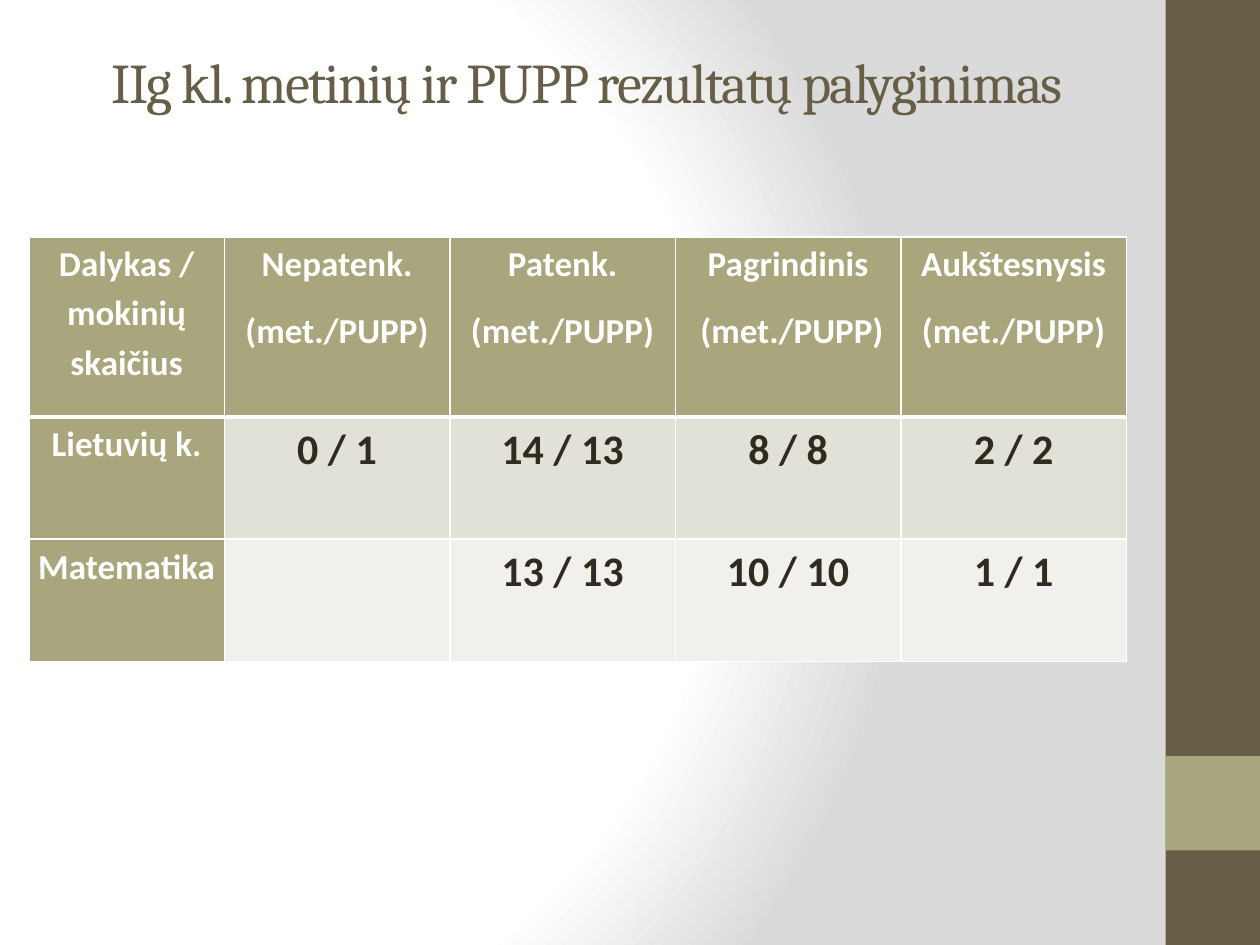
"""Build a slide comparing annual and PUPP results of class IIg."""
from lxml.etree import SubElement
from pptx import Presentation
from pptx.dml.color import RGBColor
from pptx.enum.shapes import MSO_SHAPE
from pptx.enum.text import MSO_ANCHOR, PP_ALIGN
from pptx.oxml import parse_xml
from pptx.oxml.ns import nsdecls, qn
from pptx.util import Inches, Pt

COLORS = {
    "brown": "675E47", "olive": "A9A57C", "ink": "2F2B20", "white": "FFFFFF",
    "gray": "DADADA", "band": "E2E1D7", "light band": "F1F0EC",
}
TITLE = "IIg kl. metinių ir PUPP rezultatų palyginimas"
ROWS = [
    ["Dalykas / mokinių skaičius", "Nepatenk.\n(met./PUPP)", "Patenk.\n(met./PUPP)",
     "Pagrindinis\n (met./PUPP)", "Aukštesnysis\n(met./PUPP)"],
    ["Lietuvių k.", "0 / 1", "14 / 13", "8 / 8", "2 / 2"],
    ["Matematika", "", "13 / 13", "10 / 10", "1 / 1"],
]
ROW_FILLS = ["olive", "band", "light band"]
COLUMN_WIDTHS = [1.55] + [1.79] * 4
ROW_HEIGHTS = [1.43, 0.97, 0.97]
SIDEBAR = [(0, 7.5, "brown"), (6, 0.75, "olive")]
BACKGROUND_STOPS = [(0, "white"), (75, "white"), (100, "gray")]


def paint_background(page):
    page.background.fill.solid()
    properties = page.element.find(".//" + qn("p:bgPr"))
    stops = "".join(
        f'<a:gs pos="{position * 1000}"><a:srgbClr val="{COLORS[color]}"/></a:gs>'
        for position, color in BACKGROUND_STOPS
    )
    gradient = parse_xml(
        f'<a:gradFill {nsdecls("a")} rotWithShape="1"><a:gsLst>{stops}</a:gsLst>'
        '<a:path path="circle"><a:fillToRect l="20000" t="50000" r="100000" b="50000"/>'
        "</a:path></a:gradFill>"
    )
    properties.replace(properties.find(qn("a:solidFill")), gradient)


def write(frame, text, *, size, color, font="Calibri", bold=False,
          line=None, after=None, tracking=None):
    for index, words in enumerate(text.split("\n")):
        para = frame.add_paragraph() if index else frame.paragraphs[0]
        para.alignment = PP_ALIGN.CENTER
        para.line_spacing = line
        para.space_after = after
        if not words:
            continue
        span = para.add_run()
        span.text = words
        span.font.name = font
        span.font.size = Pt(size)
        span.font.bold = bold
        span.font.color.rgb = RGBColor.from_string(COLORS[color])
        if tracking is not None:
            span.font._element.set("spc", str(int(tracking * 100)))


def set_borders(cell, bottom):
    properties = cell._tc.get_or_add_tcPr()
    widths = {"a:lnL": 1, "a:lnR": 1, "a:lnT": 1, "a:lnB": bottom}
    for position, (tag, width) in enumerate(widths.items()):
        border = properties.makeelement(qn(tag), {"w": str(Pt(width))})
        fill = SubElement(border, qn("a:solidFill"))
        SubElement(fill, qn("a:srgbClr"), val=COLORS["white"])
        properties.insert(position, border)


def add_sidebar(page):
    for top, height, color in SIDEBAR:
        block = page.shapes.add_shape(
            MSO_SHAPE.RECTANGLE, Inches(9.25), Inches(top), Inches(0.75), Inches(height))
        block.shadow.inherit = False
        block.fill.solid()
        block.fill.fore_color.rgb = RGBColor.from_string(COLORS[color])
        block.line.fill.background()


def add_title(page):
    box = page.shapes.add_textbox(Inches(0.31), Inches(0.3), Inches(8.7), Inches(0.69))
    box.text_frame.word_wrap = True
    box.text_frame.vertical_anchor = MSO_ANCHOR.MIDDLE
    write(box.text_frame, TITLE, size=32, color="brown", font="Cambria", tracking=-1)


def add_results(page):
    table = page.shapes.add_table(
        len(ROWS), len(COLUMN_WIDTHS), Inches(0.23), Inches(1.88),
        Inches(sum(COLUMN_WIDTHS)), Inches(sum(ROW_HEIGHTS))).table
    for column, width in zip(table.columns, COLUMN_WIDTHS):
        column.width = Inches(width)
    for row, height in zip(table.rows, ROW_HEIGHTS):
        row.height = Inches(height)
    for row_index, texts in enumerate(ROWS):
        for column_index, text in enumerate(texts):
            cell = table.cell(row_index, column_index)
            heading = row_index == 0 or column_index == 0
            cell.margin_left = cell.margin_right = cell.margin_top = cell.margin_bottom = 0
            cell.fill.solid()
            cell.fill.fore_color.rgb = RGBColor.from_string(
                COLORS["olive" if heading else ROW_FILLS[row_index]])
            set_borders(cell, bottom=3 if row_index == 0 else 1)
            write(cell.text_frame, text, size=20 if heading else 24,
                  color="white" if heading else "ink", bold=True, line=1.15, after=Pt(10))


def main():
    deck = Presentation()
    deck.slide_width, deck.slide_height = Inches(10), Inches(7.5)
    page = deck.slides.add_slide(deck.slide_layouts[6])
    paint_background(page)
    add_sidebar(page)
    add_title(page)
    add_results(page)
    deck.save("out.pptx")


if __name__ == "__main__":
    main()
